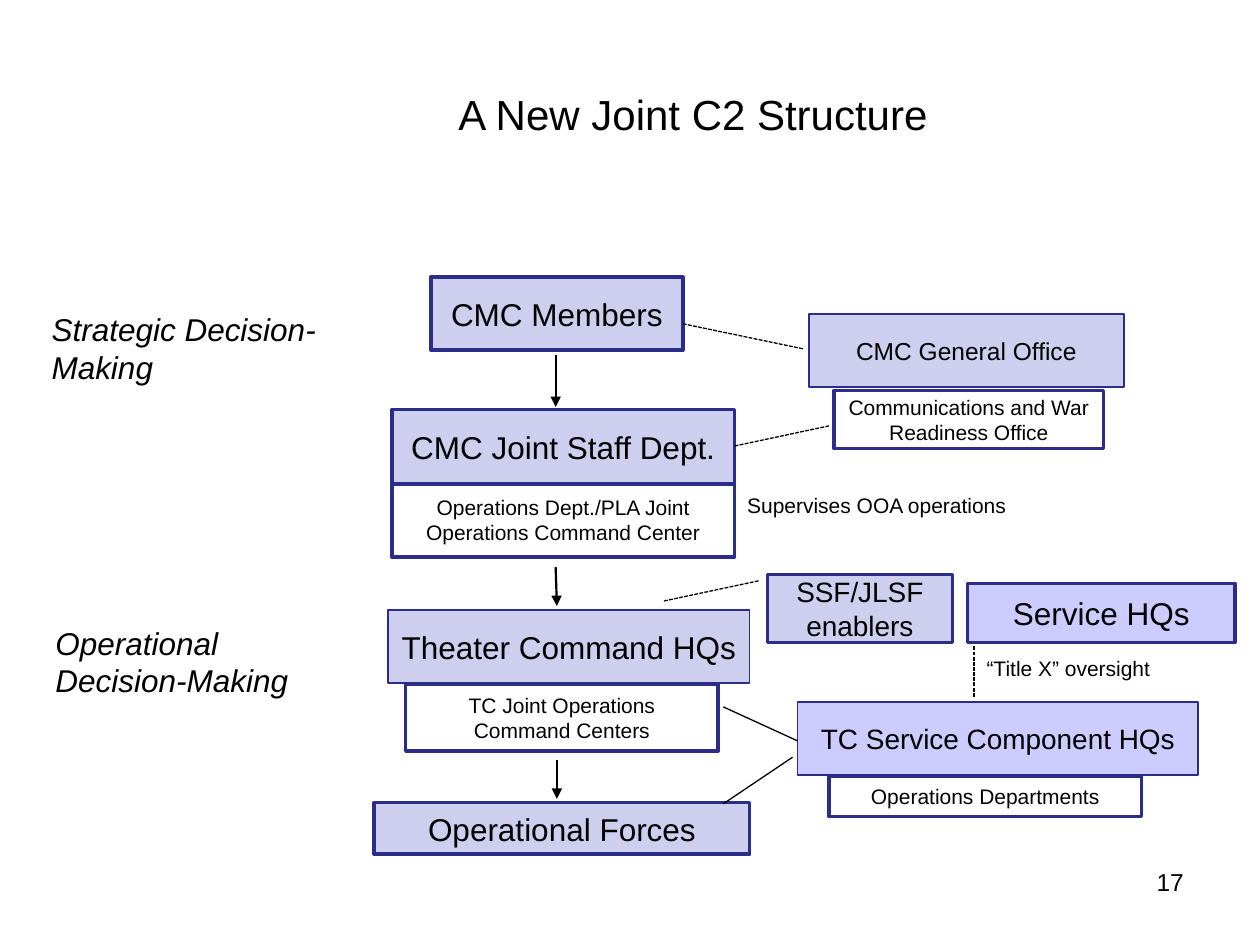
from dataclasses import dataclass

from lxml import etree
from pptx import Presentation
from pptx import util as u
from pptx.dml.color import RGBColor
from pptx.enum import dml, shapes, text
from pptx.oxml import ns

NAVY, LILAC, VIOLET, WHITE, BLACK = "2C2C89", "CECEEE", "CCCCFF", "FFFFFF", "000000"


@dataclass
class Box:
    text: str
    at: tuple[float, float, float, float]
    size: int
    fill: str = LILAC
    line: float = 2
    inset: float = 0


@dataclass
class Label:
    text: str
    at: tuple[float, float, float, float]
    size: int = 12
    italic: bool = False
    align: text.PP_ALIGN = text.PP_ALIGN.LEFT


@dataclass
class Link:
    start: tuple[float, float]
    end: tuple[float, float]
    dashed: bool = False
    arrow: bool = False


BOXES = [
    Box("CMC Members", (3.42, 2.2, 2, 0.58), 18),
    Box("CMC General Office", (6.42, 2.49, 2.5, 0.58), 14, line=1),
    Box("Communications and War Readiness Office", (6.62, 3.1, 2.14, 0.46), 12, WHITE),
    Box("Operations Dept./PLA Joint Operations Command Center",
        (3.11, 3.83, 2.72, 0.59), 12, WHITE, inset=0.2),
    Box("CMC Joint Staff Dept.", (3.11, 3.25, 2.72, 0.59), 18),
    Box("Theater Command HQs", (3.08, 4.84, 2.87, 0.58), 18, line=1),
    Box("TC Joint Operations Command Centers", (3.22, 5.43, 2.48, 0.53), 12, WHITE, inset=0.4),
    Box("TC Service Component HQs", (6.33, 5.57, 3.18, 0.58), 16, VIOLET, line=1),
    Box("Operations Departments", (6.58, 6.16, 2.48, 0.32), 12, WHITE),
    Box("Service HQs", (7.68, 4.63, 2.12, 0.47), 18, VIOLET),
    Box("Operational Forces", (2.97, 6.37, 2.98, 0.41), 18),
    Box("SSF/JLSF\nenablers", (6.09, 4.56, 1.47, 0.54), 16),
]

LABELS = [
    Label("A New Joint C2 Structure", (2.5, 0.7, 6, 0.49), 24, align=text.PP_ALIGN.CENTER),
    Label("Strategic Decision-\nMaking", (0.41, 2.46, 2.2, 0.63), 18, True),
    Label("Operational Decision-Making", (0.44, 4.95, 1.9, 0.63), 18, True),
    Label("Supervises OOA operations", (5.93, 3.91, 2.15, 0.23)),
    Label("“Title X” oversight", (7.83, 5.2, 1.4, 0.23)),
    Label("17", (9.18, 6.88, 0.3, 0.25), 14),
]

LINKS = [
    Link((5.42, 2.57), (6.38, 2.77), dashed=True),
    Link((5.83, 3.54), (6.58, 3.38), dashed=True),
    Link((5.27, 4.77), (6.02, 4.61), dashed=True),
    Link((7.73, 5.13), (7.73, 5.53), dashed=True),
    Link((5.74, 5.61), (6.33, 5.88)),
    Link((5.74, 6.38), (6.29, 6.01)),
    Link((4.41, 2.82), (4.41, 3.23), arrow=True),
    Link((4.41, 4.5), (4.42, 4.81), arrow=True),
    Link((4.42, 6.03), (4.42, 6.34), arrow=True),
]


def rgb(value: str) -> RGBColor:
    return RGBColor.from_string(value)


def write(tf, content: str, size: int, align, anchor, italic=False, inset=0.0) -> None:
    frame = {"word_wrap": True, "vertical_anchor": anchor, "margin_top": 0, "margin_bottom": 0,
             "margin_left": u.Inches(inset), "margin_right": u.Inches(inset)}
    for name, value in frame.items():
        setattr(tf, name, value)
    tf.text = content
    for p in tf.paragraphs:
        p.alignment = align
        font = {"name": "Arial", "size": u.Pt(size), "italic": italic}
        for r in p.runs:
            for name, value in font.items():
                setattr(r.font, name, value)
            r.font.color.rgb = rgb(BLACK)


def draw_box(s, box: Box) -> None:
    sp = s.shapes.add_shape(shapes.MSO_SHAPE.RECTANGLE, *map(u.Inches, box.at))
    sp.shadow.inherit = False
    sp.fill.solid()
    sp.fill.fore_color.rgb = rgb(box.fill)
    sp.line.color.rgb = rgb(NAVY)
    sp.line.width = u.Pt(box.line)
    write(sp.text_frame, box.text, box.size, text.PP_ALIGN.CENTER,
          text.MSO_ANCHOR.MIDDLE, inset=box.inset)


def draw_label(s, label: Label) -> None:
    sp = s.shapes.add_textbox(*map(u.Inches, label.at))
    write(sp.text_frame, label.text, label.size, label.align,
          text.MSO_ANCHOR.TOP, label.italic)


def draw_link(s, link: Link) -> None:
    sp = s.shapes.add_connector(shapes.MSO_CONNECTOR.STRAIGHT,
                                *map(u.Inches, link.start + link.end))
    sp.line.color.rgb = rgb(BLACK)
    sp.line.width = u.Pt(1.25 if link.arrow else 0.75)
    if link.dashed:
        sp.line.dash_style = dml.MSO_LINE.SQUARE_DOT
    if link.arrow:
        etree.SubElement(sp.line._get_or_add_ln(), ns.qn("a:tailEnd"), type="triangle")
    etree.SubElement(sp._element.spPr, ns.qn("a:effectLst"))


def main() -> None:
    prs = Presentation()
    prs.slide_width, prs.slide_height = u.Inches(10), u.Inches(7.5)
    s = prs.slides.add_slide(prs.slide_layouts[6])
    for box in BOXES:
        draw_box(s, box)
    for link in LINKS:
        draw_link(s, link)
    for label in LABELS:
        draw_label(s, label)
    prs.save("out.pptx")


if __name__ == "__main__":
    main()
